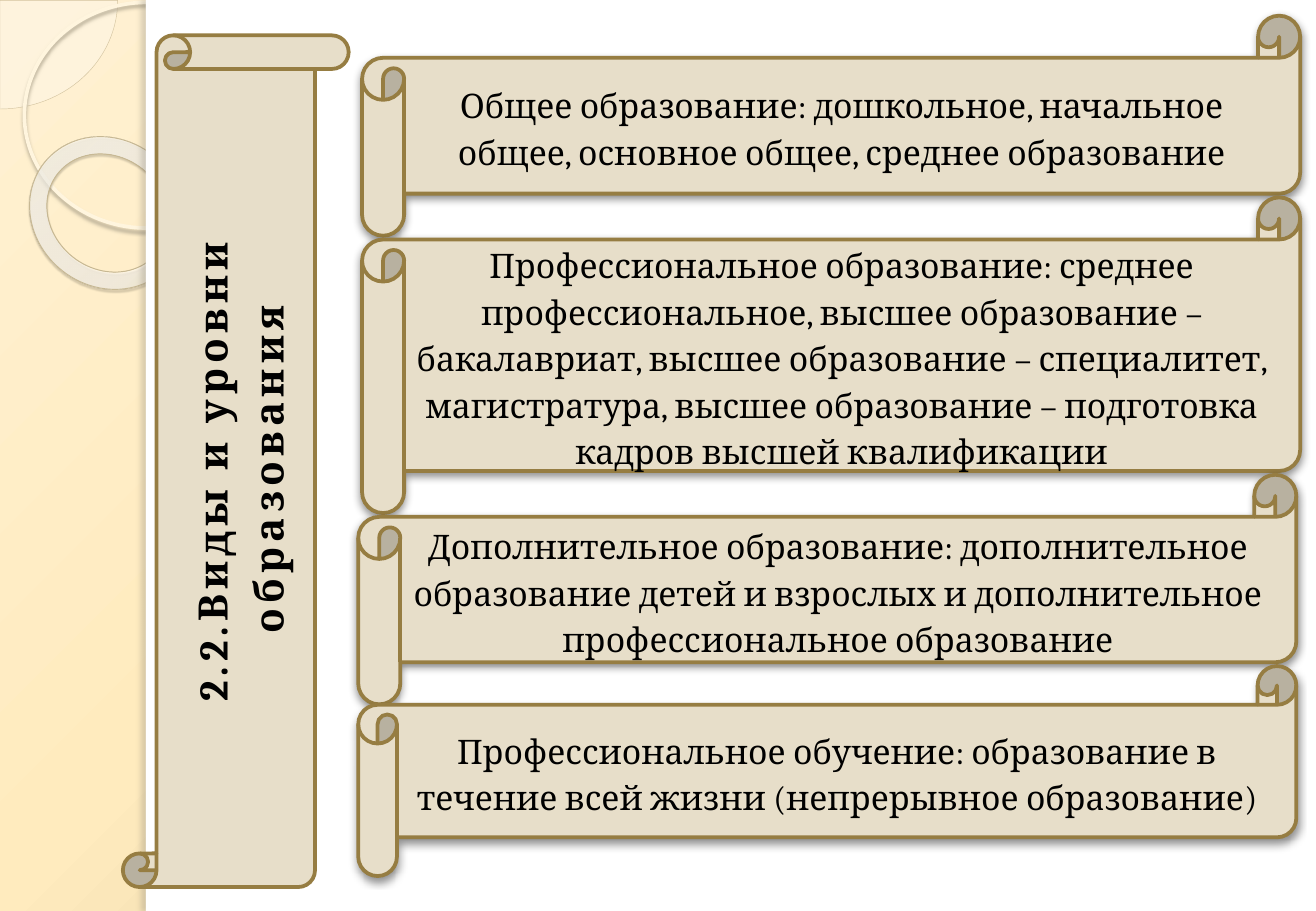
from lxml.etree import SubElement
from pptx import Presentation
from pptx.dml.color import RGBColor
from pptx.enum.shapes import MSO_SHAPE
from pptx.enum.text import MSO_ANCHOR, PP_ALIGN
from pptx.oxml.ns import qn
from pptx.util import Cm, Pt

WIDTH, HEIGHT = 27.51, 19.05
PARCHMENT, BRONZE = "E7DEC9", "967D42"
SCROLL_SHADOW = ("000000", 43, 5, 2, 90)
OVERLAP = 0.8
SCROLLS = [
    (7.57, 4.6, 0.88, "Общее образование: дошкольное, начальное общее, "
     "основное общее, среднее образование"),
    (7.57, 6.6, 0.88, "Профессиональное образование: среднее профессиональное, "
     "высшее образование – бакалавриат, высшее образование – специалитет, "
     "магистратура, высшее образование – подготовка кадров высшей квалификации"),
    (7.49, 4.8, 0.88, "Дополнительное образование: дополнительное образование "
     "детей и взрослых и дополнительное профессиональное образование"),
    (7.49, 4.39, 0.81, "Профессиональное обучение: образование в течение всей "
     "жизни (непрерывное образование)"),
]


def rgb(color):
    """Turn a hex string into a colour."""
    return RGBColor.from_string(color)


def add_color(parent, color, alpha=100):
    """Append a colour with its opacity in percent."""
    clr = SubElement(parent, qn("a:srgbClr"), val=color)
    if alpha < 100:
        SubElement(clr, qn("a:alpha"), val=str(alpha * 1000))


def set_gradient(fill, parent, stops, focus):
    """Give the fill held by parent a circular gradient."""
    fill.gradient()
    grad = parent.find(qn("a:gradFill"))
    for child in list(grad):
        grad.remove(child)
    gs_list = SubElement(grad, qn("a:gsLst"))
    for pos, color, alpha in stops:
        gs = SubElement(gs_list, qn("a:gs"), pos=str(pos * 1000))
        add_color(gs, color, alpha)
    circle = SubElement(grad, qn("a:path"), path="circle")
    sides = {side: str(v * 1000) for side, v in zip("ltrb", focus)}
    SubElement(circle, qn("a:fillToRect"), **sides)


def add_figure(slide, kind, box, fill=None, alpha=100, line=None, shadow=None):
    """Add a preset shape with its fill, line and shadow."""
    sp = slide.shapes.add_shape(kind, *map(Cm, box))
    sp.shadow.inherit = False
    if fill:
        sp.fill.solid()
        sp.fill.fore_color.rgb = rgb(fill)
        if alpha < 100:
            clr = sp._element.spPr.find(qn("a:solidFill"))[0]
            SubElement(clr, qn("a:alpha"), val=str(alpha * 1000))
    else:
        sp.fill.background()
    if line:
        sp.line.color.rgb = rgb(line[0])
        sp.line.width = Pt(line[1])
    else:
        sp.line.fill.background()
    if shadow:
        color, opacity, blur, dist, angle = shadow
        effects = sp._element.spPr.find(qn("a:effectLst"))
        outer = SubElement(effects, qn("a:outerShdw"), blurRad=str(Pt(blur)),
                           dist=str(Pt(dist)), dir=str(angle * 60000),
                           algn="tl", rotWithShape="0")
        add_color(outer, color, opacity)
    return sp


def write_text(sp, text, size, bold=False):
    """Write one centred paragraph in a shape and return its run."""
    tf = sp.text_frame
    tf.word_wrap = True
    tf.vertical_anchor = MSO_ANCHOR.MIDDLE
    p = tf.paragraphs[0]
    p.alignment = PP_ALIGN.CENTER
    p.line_spacing = 1.15
    r = p.add_run()
    r.text = text
    p.font.name = "Cambria"
    p.font.size = Pt(size)
    p.font.bold = bold
    p.font.color.rgb = rgb("000000")
    return r


def add_backdrop(slide, width, height):
    """Draw the gradient strip, its rings and the white page."""
    fill = slide.background.fill
    set_gradient(fill, slide._element.find(".//" + qn("p:bgPr")),
                 [(0, "FFF1D3", 100), (40, "FFEBBE", 100), (100, "C9B484", 100)],
                 (-24, -20, 124, 120))
    pie = add_figure(slide, MSO_SHAPE.PIE, (-2.46, -2.26, 4.92, 4.54),
                     "FEFAF4", 33, ("D3C39F", 0.25))
    pie.adjustments[0], pie.adjustments[1] = 0, 54
    add_figure(slide, MSO_SHAPE.OVAL, (0.51, 0.05, 5.13, 4.72),
               line=("FFF5DE", 2.15), shadow=("B0A68F", 85, 2, 2, 90))
    ring = add_figure(slide, MSO_SHAPE.DONUT, (0.56, 2.92, 3.38, 3.07),
                      line=("C7B893", 0.58), shadow=("5A5444", 35, 1, 1.2, 75))
    ring.rotation = 38.6
    ring.adjustments[0] = 0.118
    set_gradient(ring.fill, ring._element.spPr,
                 [(0, "FFFCF6", 70), (70, "FFFEFB", 55), (100, "F0D28E", 60)],
                 (-408, -50, 508, 150))
    left = 3.05
    add_figure(slide, MSO_SHAPE.RECTANGLE, (left, 0, width - left, height), "FFFFFF")
    add_figure(slide, MSO_SHAPE.RECTANGLE, (left, 0, 0.23, height), "FFFFFF",
               shadow=("736F63", 25, 3, 3, 180))


def add_level_scrolls(slide, top, width):
    """Stack the horizontal scrolls downwards, each overlapping the last."""
    for left, height, roll, text in SCROLLS:
        sp = add_figure(slide, MSO_SHAPE.HORIZONTAL_SCROLL,
                        (left, top, width, height), PARCHMENT,
                        line=(BRONZE, 2.25), shadow=SCROLL_SHADOW)
        sp.adjustments[0] = roll / height
        write_text(sp, text, 20)
        top += height - OVERLAP


def add_title_scroll(slide, left, top, width, height):
    """Draw the vertical scroll with the title turned upwards."""
    sp = add_figure(slide, MSO_SHAPE.VERTICAL_SCROLL, (left, top, width, height),
                    PARCHMENT, line=(BRONZE, 2.25))
    sp.adjustments[0] = 0.149
    r = write_text(sp, "2.2.Виды и уровни образования", 24, True)
    r._r.get_or_add_rPr().set("spc", "300")
    sp.text_frame._txBody.bodyPr.set("vert", "vert270")


def main():
    """Build the slide and save it."""
    prs = Presentation()
    prs.slide_width, prs.slide_height = Cm(WIDTH), Cm(HEIGHT)
    slide = prs.slides.add_slide(prs.slide_layouts[6])
    add_backdrop(slide, WIDTH, HEIGHT)
    add_level_scrolls(slide, 0.33, 19.61)
    add_title_scroll(slide, 2.57, 0.74, 4.72, 17.81)
    prs.save("out.pptx")


if __name__ == "__main__":
    main()
